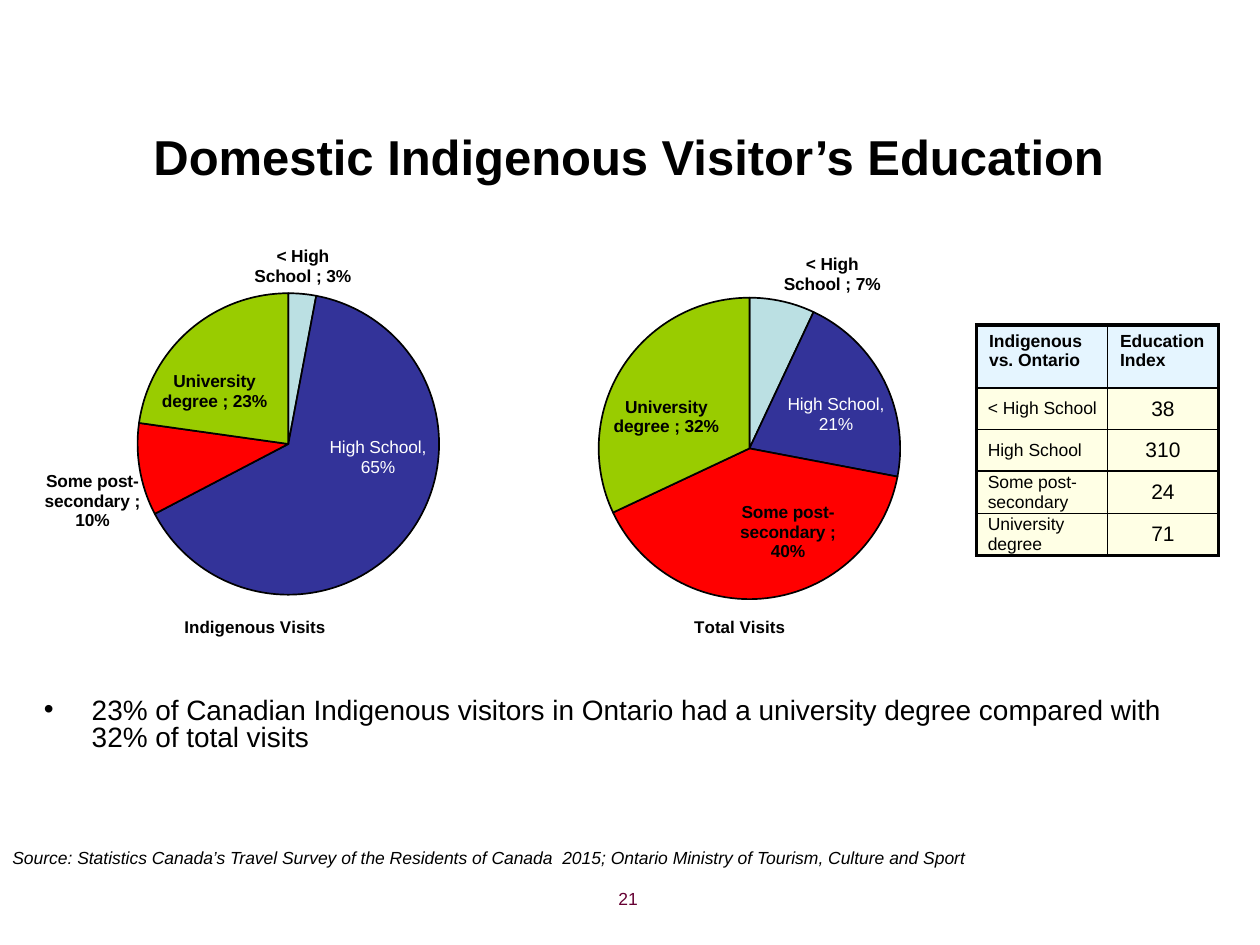
import dataclasses

import lxml.etree
import pptx
import pptx.chart.data
import pptx.dml.color
import pptx.enum.chart
import pptx.enum.text
import pptx.oxml
import pptx.oxml.ns
import pptx.util

Inches = pptx.util.Inches
Align = pptx.enum.text.PP_ALIGN
Anchor = pptx.enum.text.MSO_ANCHOR
Position = pptx.enum.chart.XL_LABEL_POSITION
qn = pptx.oxml.ns.qn


@dataclasses.dataclass(frozen=True)
class Theme:
    font: str = "Arial"
    ink: str = "000000"
    white: str = "FFFFFF"
    number: str = "660033"
    header: str = "CCECFF"
    row: str = "FFFFCC"
    slices: tuple = ("BBE0E3", "333399", "FF0000", "99CC00")
    title_size: float = 28
    body_size: float = 16
    value_size: float = 12
    small_size: float = 10
    label_size: float = 9.9
    caption_size: float = 9.7
    thick: float = 2.25
    thin: float = 1
    outline: float = 0.97


THEME = Theme()
EDUCATION = ("< High School ", "High School", "Some post-secondary ", "University degree ")
INDEX_ROWS = (("Indigenous vs. Ontario", "Education Index"), ("< High School", "38"),
              ("High School", "310"), ("Some post-secondary", "24"), ("University degree", "71"))
CHART_TOP, CHART_WIDTH, CHART_HEIGHT = 1.83, 3.86, 3.53
PIE_WIDTH, PIE_HEIGHT, CAPTION_TOP = 0.62, 0.68, 0.86


def color(value):
    return pptx.dml.color.RGBColor.from_string(value)


def style_font(font, size, ink=THEME.ink, bold=False, italic=False):
    font.name = THEME.font
    font.size = pptx.util.Pt(size)
    font.bold = bold
    font.italic = italic
    font.color.rgb = color(ink)


def write(frame, text, size, align=Align.LEFT, anchor=Anchor.TOP, **style):
    frame.word_wrap = True
    frame.vertical_anchor = anchor
    para = frame.paragraphs[0]
    para.alignment = align
    span = para.add_run()
    span.text = text
    style_font(span.font, size, **style)
    return para


def add_text(page, area, text, size, **style):
    box = page.shapes.add_textbox(*map(Inches, area))
    return write(box.text_frame, text, size, **style)


def add_bullet(para, indent):
    properties = para._p.get_or_add_pPr()
    properties.set("marL", str(Inches(indent)))
    properties.set("indent", str(-Inches(indent)))
    lxml.etree.SubElement(properties, qn("a:buFont")).set("typeface", THEME.font)
    lxml.etree.SubElement(properties, qn("a:buChar")).set("char", "•")
    para.line_spacing = 0.8


def set_layout(parent, after, **values):
    for old in parent.findall(qn("c:layout")):
        parent.remove(old)
    layout = lxml.etree.Element(qn("c:layout"))
    manual = lxml.etree.SubElement(layout, qn("c:manualLayout"))
    for name, value in values.items():
        lxml.etree.SubElement(manual, qn("c:" + name)).set("val", str(value))
    previous = parent.find(qn(after)) if after else None
    parent.insert(0 if previous is None else parent.index(previous) + 1, layout)


def format_label(point, label_node, position, shift):
    set_layout(label_node, "c:idx", x=shift[0], y=shift[1])
    label_node.find(qn("c:showCatName")).set("val", "1")
    lxml.etree.SubElement(label_node, qn("c:separator")).text = "; "
    point.data_label.position = position


def hide_leader_lines(labels_node):
    leader = labels_node.find(qn("c:showLeaderLines"))
    if leader is None:
        leader = lxml.etree.SubElement(labels_node, qn("c:showLeaderLines"))
    leader.set("val", "0")


def add_pie(page, left, caption, values, pie_at, caption_left, labels):
    data = pptx.chart.data.CategoryChartData(number_format="0%")
    data.categories = EDUCATION
    data.add_series("Series 1", values)
    area = map(Inches, (left, CHART_TOP, CHART_WIDTH, CHART_HEIGHT))
    chart = page.shapes.add_chart(pptx.enum.chart.XL_CHART_TYPE.PIE, *area, data).chart
    chart.has_legend = False
    style_font(chart.font, THEME.label_size, bold=True)
    chart.has_title = True
    span = chart.chart_title.text_frame.paragraphs[0].add_run()
    span.text = caption
    style_font(span.font, THEME.caption_size, bold=True)
    root = chart._chartSpace
    set_layout(root.xpath(".//c:title")[0], "c:tx",
               xMode="edge", yMode="edge", x=caption_left, y=CAPTION_TOP)
    set_layout(root.xpath(".//c:plotArea")[0], None, layoutTarget="inner",
               xMode="edge", yMode="edge", x=pie_at[0], y=pie_at[1],
               w=PIE_WIDTH, h=PIE_HEIGHT)

    plot = chart.plots[0]
    plot.vary_by_categories = True
    series = plot.series[0]
    series_labels = series.data_labels
    series_labels.show_value = True
    series_labels.show_category_name = True
    series_labels.number_format = "0%"
    series_labels.number_format_is_linked = False
    style_font(series_labels.font, THEME.label_size, bold=True)
    hide_leader_lines(root.xpath(".//c:ser/c:dLbls")[0])
    for index, (fill, (position, shift)) in enumerate(zip(THEME.slices, labels)):
        point = series.points[index]
        point.format.fill.solid()
        point.format.fill.fore_color.rgb = color(fill)
        point.format.line.color.rgb = color(THEME.ink)
        point.format.line.width = pptx.util.Pt(THEME.outline)
        if EDUCATION[index] == "High School":
            span = point.data_label.text_frame.paragraphs[0].add_run()
            span.text = f"High School, {values[index]:.0%}"
            style_font(span.font, THEME.label_size, ink=THEME.white)
        else:
            style_font(point.data_label.font, THEME.label_size, bold=True)
        label_node = root.xpath(f".//c:dLbl[c:idx/@val='{index}']")[0]
        format_label(point, label_node, position, shift)


def set_borders(cell, widths):
    properties = cell._tc.get_or_add_tcPr()
    for place, (side, width) in enumerate(zip("LRTB", widths)):
        line = lxml.etree.Element(qn(f"a:ln{side}"), w=str(pptx.util.Pt(width)))
        fill = lxml.etree.SubElement(line, qn("a:solidFill"))
        lxml.etree.SubElement(fill, qn("a:srgbClr")).set("val", THEME.ink)
        properties.insert(place, line)


def fill_cell(cell, fill):
    cell.fill.solid()
    cell.fill.fore_color.rgb = color(fill)
    tint = cell._tc.tcPr.find(".//" + qn("a:srgbClr"))
    lxml.etree.SubElement(tint, qn("a:alpha")).set("val", "50000")


def add_index_table(page, left, top, widths, heights):
    rows, columns = len(heights), len(widths)
    area = map(Inches, (left, top, sum(widths), sum(heights)))
    table = page.shapes.add_table(rows, columns, *area).table
    table.horz_banding = False
    for column, width in zip(table.columns, widths):
        column.width = Inches(width)
    for row, height in zip(table.rows, heights):
        row.height = Inches(height)
    for r, texts in enumerate(INDEX_ROWS):
        for c, text in enumerate(texts):
            cell = table.cell(r, c)
            is_header, is_value = r == 0, r > 0 and c > 0
            insets = (0.1, 0.05, 0.1, 0.05) if is_header else (0 if is_value else 0.09, 0, 0, 0)
            (cell.margin_left, cell.margin_top,
             cell.margin_right, cell.margin_bottom) = map(Inches, insets)
            write(cell.text_frame, text, THEME.value_size if is_value else THEME.small_size,
                  align=Align.CENTER if is_value else Align.LEFT, bold=is_header)
            cell.vertical_anchor = Anchor.TOP if is_header else Anchor.MIDDLE
            fill_cell(cell, THEME.header if is_header else THEME.row)
            edges = (c == 0, c == columns - 1, r == 0, r == rows - 1)
            set_borders(cell, [THEME.thick if edge else THEME.thin for edge in edges])


def add_title(page, area, text):
    title = page.shapes.title
    title.left, title.top, title.width, title.height = map(Inches, area)
    write(title.text_frame, text, THEME.title_size, align=Align.CENTER,
          anchor=Anchor.MIDDLE, bold=True)


def main():
    deck = pptx.Presentation()
    deck.slide_width, deck.slide_height = Inches(10), Inches(7.5)
    page = deck.slides.add_slide(deck.slide_layouts.get_by_name("Title Only"))
    add_title(page, (0.17, 0.86, 9.64, 0.75), "Domestic Indigenous Visitor’s Education")
    finding = add_text(page, (0.25, 5.5, 9.5, 1.25),
                       "23% of Canadian Indigenous visitors in Ontario had a university degree "
                       "compared with 32% of total visits", THEME.body_size)
    add_bullet(finding, 0.38)
    add_text(page, (2.83, 7, 2.33, 0.35), "21", THEME.small_size,
             align=Align.RIGHT, ink=THEME.number)
    outside, center = Position.OUTSIDE_END, Position.CENTER
    add_pie(page, 4.25, "Total Visits ", (0.07, 0.21, 0.4, 0.32), (0.13, 0.15), 0.32,
            ((outside, (0, 0)), (center, (0.04, 0)),
             (center, (0.06, 0.02)), (center, (-0.04, 0.02))))
    add_text(page, (0, 6.67, 9.8, 0.27),
             "Source: Statistics Canada’s Travel Survey of the Residents of Canada  2015; "
             "Ontario Ministry of Tourism, Culture and Sport", THEME.small_size, italic=True)
    add_index_table(page, 7.75, 2.58, (1.04, 0.88), (0.5,) + (0.33,) * 4)
    add_pie(page, 0.32, "Indigenous Visits ", (0.03, 0.65, 0.1, 0.23), (0.2, 0.14), 0.29,
            ((outside, (-0.1, 0)), (center, (0.06, -0.07)),
             (center, (-0.25, 0.1)), (center, (-0.05, 0.01))))
    deck.save("out.pptx")


if __name__ == "__main__":
    main()
